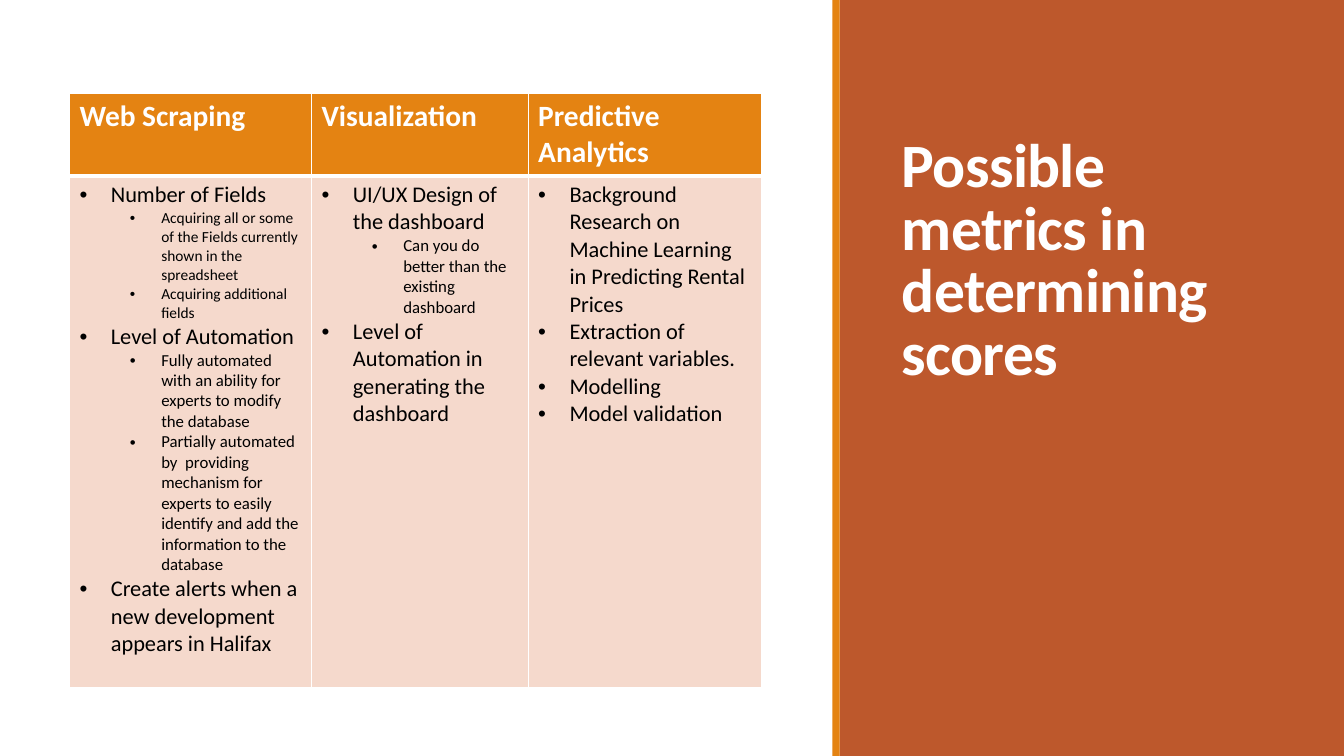
from dataclasses import dataclass

from lxml.etree import SubElement
from pptx import Presentation
from pptx.dml.color import RGBColor
from pptx.enum.shapes import MSO_SHAPE
from pptx.enum.text import MSO_ANCHOR
from pptx.oxml.ns import qn
from pptx.slide import Slide
from pptx.table import _Cell
from pptx.text.text import _Paragraph
from pptx.util import Cm, Pt

WHITE = RGBColor(0xFF, 0xFF, 0xFF)
BLACK = RGBColor(0x00, 0x00, 0x00)
ORANGE = RGBColor(0xE4, 0x83, 0x12)
RUST = RGBColor(0xBD, 0x58, 0x2C)
PEACH = RGBColor(0xF5, 0xD9, 0xCC)

TITLE_FORMAT = {"name": "Calibri", "size": Pt(44), "bold": True}
HEADER_FORMAT = {"name": "Calibri", "size": Pt(21), "bold": True}
BODY_FORMAT = {"name": "Calibri", "size": Pt(16), "bold": False}

BULLET_INDENT = Cm(0.79)
LEVEL_STEP = Cm(1.27)
ROW_HEIGHTS = (2.08, 12.88)


@dataclass
class Panel:
    left: float
    width: float
    color: RGBColor


@dataclass
class Bullet:
    text: str
    level: int = 0
    size: int = 16


@dataclass
class Column:
    heading: str
    width: float
    bullets: list[Bullet]


PANELS = [Panel(21.16, 12.71, RUST), Panel(20.98, 0.18, ORANGE)]

COLUMNS = [
    Column("Web Scraping", 6.1, [
        Bullet("Number of Fields"),
        Bullet("Acquiring all or some of the Fields currently shown in the spreadsheet", 1, 11),
        Bullet("Acquiring additional fields", 1, 11),
        Bullet("Level of Automation"),
        Bullet("Fully automated with an ability for experts to modify the database", 1, 12),
        Bullet("Partially automated by  providing mechanism for experts to easily "
               "identify and add the information to the database", 1, 12),
        Bullet("Create alerts when a new development appears in Halifax"),
    ]),
    Column("Visualization", 5.46, [
        Bullet("UI/UX Design of the dashboard"),
        Bullet("Can you do better than the existing dashboard", 1, 12),
        Bullet("Level of Automation in generating the dashboard"),
    ]),
    Column("Predictive Analytics", 5.89, [
        Bullet("Background Research on Machine Learning in Predicting Rental Prices"),
        Bullet("Extraction of relevant variables."),
        Bullet("Modelling"),
        Bullet("Model validation"),
    ]),
]


def write_text(paragraph: _Paragraph, text: str, values: dict, color: RGBColor) -> None:
    run = paragraph.add_run()
    run.text = text
    for name, value in values.items():
        setattr(run.font, name, value)
    run.font.color.rgb = color


def add_panel(slide: Slide, panel: Panel, height: int) -> None:
    shape = slide.shapes.add_shape(
        MSO_SHAPE.RECTANGLE, Cm(panel.left), 0, Cm(panel.width), height)
    shape.shadow.inherit = False
    shape.fill.solid()
    shape.fill.fore_color.rgb = panel.color
    shape.line.fill.background()


def add_title(slide: Slide) -> None:
    shape = slide.shapes.add_textbox(Cm(22.48), Cm(1.78), Cm(10.16), Cm(8.13))
    frame = shape.text_frame
    frame.word_wrap = True
    frame.vertical_anchor = MSO_ANCHOR.BOTTOM
    paragraph = frame.paragraphs[0]
    paragraph.line_spacing = 0.85
    paragraph.space_after = Pt(6)
    write_text(paragraph, "Possible metrics in determining scores", TITLE_FORMAT, WHITE)
    paragraph.runs[0]._r.get_or_add_rPr().set("spc", "-50")


def style_cell(cell: _Cell, fill: RGBColor, top: int, bottom: int) -> None:
    properties = cell._tc.get_or_add_tcPr()
    for side, points in (("L", 1), ("R", 1), ("T", top), ("B", bottom)):
        border = SubElement(properties, qn(f"a:ln{side}"), w=str(Pt(points)))
        solid_fill = SubElement(border, qn("a:solidFill"))
        SubElement(solid_fill, qn("a:srgbClr"), val=str(WHITE))
    cell.fill.solid()
    cell.fill.fore_color.rgb = fill


def write_bullet(paragraph: _Paragraph, bullet: Bullet) -> None:
    paragraph.level = bullet.level
    properties = paragraph._p.get_or_add_pPr()
    properties.set("marL", str(BULLET_INDENT + bullet.level * LEVEL_STEP))
    properties.set("indent", str(-BULLET_INDENT))
    SubElement(properties, qn("a:buFont"), typeface="Arial")
    SubElement(properties, qn("a:buChar"), char="•")
    write_text(paragraph, bullet.text, BODY_FORMAT | {"size": Pt(bullet.size)}, BLACK)


def add_metrics_table(slide: Slide) -> None:
    width = sum(column.width for column in COLUMNS)
    table = slide.shapes.add_table(
        len(ROW_HEIGHTS), len(COLUMNS),
        Cm(1.75), Cm(2.36), Cm(width), Cm(sum(ROW_HEIGHTS))).table
    for row, height in zip(table.rows, ROW_HEIGHTS):
        row.height = Cm(height)
    for index, column in enumerate(COLUMNS):
        table.columns[index].width = Cm(column.width)
        header, body = table.cell(0, index), table.cell(1, index)
        style_cell(header, ORANGE, top=1, bottom=3)
        style_cell(body, PEACH, top=3, bottom=1)
        write_text(header.text_frame.paragraphs[0], column.heading, HEADER_FORMAT, WHITE)
        frame = body.text_frame
        for position, bullet in enumerate(column.bullets):
            paragraph = frame.add_paragraph() if position else frame.paragraphs[0]
            write_bullet(paragraph, bullet)


def main() -> None:
    presentation = Presentation()
    presentation.slide_width = Cm(33.87)
    presentation.slide_height = Cm(19.05)
    slide = presentation.slides.add_slide(presentation.slide_layouts[6])
    for panel in PANELS:
        add_panel(slide, panel, presentation.slide_height)
    add_title(slide)
    add_metrics_table(slide)
    presentation.save("out.pptx")


if __name__ == "__main__":
    main()
